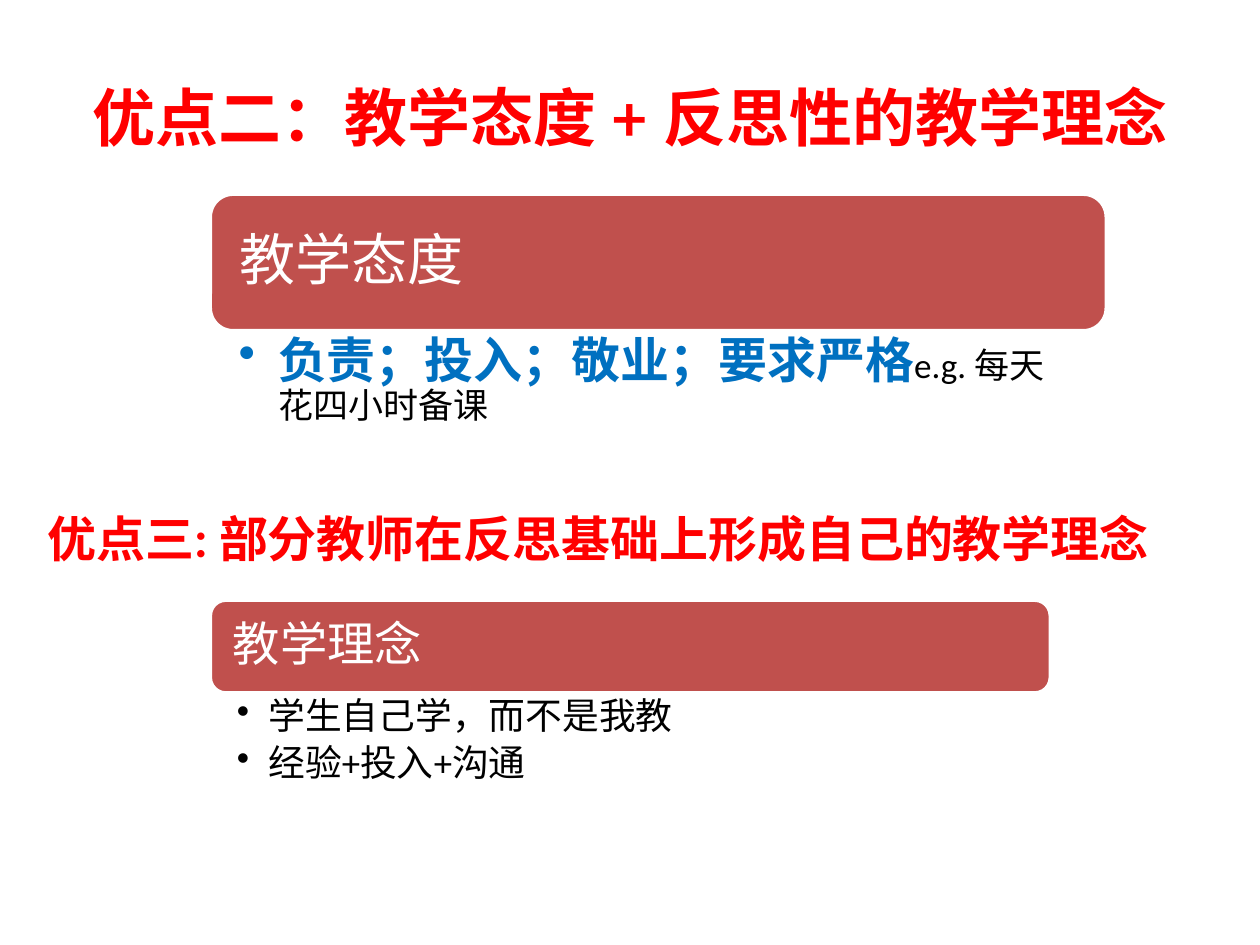
"""Build a slide on two teaching strengths, each a heading over a titled card with bullets."""
import lxml.etree
import pptx
import pptx.dml.color
import pptx.enum.shapes
import pptx.enum.text
import pptx.oxml.ns
import pptx.util

Pt = pptx.util.Pt
ALIGN = pptx.enum.text.PP_ALIGN
ANCHOR = pptx.enum.text.MSO_ANCHOR
COLORS = {"heading": "FF0000", "card": "C0504D", "white": "FFFFFF", "accent": "0070C0", "body": "000000"}


def rgb(name):
    return pptx.dml.color.RGBColor.from_string(COLORS[name])


def write(shape, paragraphs, font, anchor, insets, align=ALIGN.LEFT):
    frame = shape.text_frame
    frame.word_wrap = True
    frame.vertical_anchor = anchor
    frame.margin_left = frame.margin_right = Pt(insets[0])
    frame.margin_top = frame.margin_bottom = Pt(insets[1])
    for index, runs in enumerate(paragraphs):
        paragraph = frame.add_paragraph() if index else frame.paragraphs[0]
        paragraph.alignment = align
        for text, size, color, bold in runs:
            run = paragraph.add_run()
            run.text = text
            run.font.name = font
            run.font.size = Pt(size)
            run.font.bold = bold
            run.font.color.rgb = rgb(color)
    return frame.paragraphs


presentation = pptx.Presentation()
presentation.slide_width, presentation.slide_height = Pt(720), Pt(540)
slide = presentation.slides.add_slide(presentation.slide_layouts[6])

headings = [
    ("优点二：教学态度 + 反思性的教学理念", 36, (36, 21.6, 648, 90), ANCHOR.MIDDLE, ALIGN.CENTER),
    ("优点三: 部分教师在反思基础上形成自己的教学理念", 28, (20.2, 287.3, 708.5, 41), ANCHOR.TOP, ALIGN.LEFT),
]
for text, size, box, anchor, align in headings:
    heading = slide.shapes.add_textbox(*map(Pt, box))
    write(heading, [[(text, size, "heading", True)]], "Lato", anchor, (7.2, 3.6), align)

card_left = 120.2
cards = [
    {
        "title": "教学态度", "size": 32, "inset": 13, "top": 111, "width": 512, "height": 78,
        "points": [[("负责；投入；敬业；要求严格", 28, "accent", True),
                    ("e.g. 每天花四小时备课", 20, "body", False)]],
        "points_height": 69, "points_inset": 16.2, "indent": 22.5, "gap": 5.6,
    },
    {
        "title": "教学理念", "size": 27, "inset": 10.3, "top": 343, "width": 480, "height": 53,
        "points": [[("学生自己学，而不是我教", 21, "body", False)],
                   [("经验+投入+沟通", 21, "body", False)]],
        "points_height": 60.5, "points_inset": 15.2, "indent": 18, "gap": 4.2,
    },
]
for card in cards:
    banner = slide.shapes.add_shape(
        pptx.enum.shapes.MSO_SHAPE.ROUNDED_RECTANGLE,
        Pt(card_left), Pt(card["top"]), Pt(card["width"]), Pt(card["height"]))
    banner.shadow.inherit = False
    banner.fill.solid()
    banner.fill.fore_color.rgb = rgb("card")
    banner.line.color.rgb = rgb("white")
    banner.line.width = Pt(2)
    title = [[(card["title"], card["size"], "white", False)]]
    for paragraph in write(banner, title, "Calibri", ANCHOR.MIDDLE, (card["inset"], card["inset"])):
        paragraph.line_spacing = 0.9

    points = slide.shapes.add_textbox(
        Pt(card_left), Pt(card["top"] + card["height"]), Pt(card["width"]), Pt(card["points_height"]))
    for paragraph in write(points, card["points"], "Calibri", ANCHOR.TOP, (card["points_inset"], 2.9)):
        paragraph.level = 1
        paragraph.line_spacing = 0.9
        paragraph.space_after = Pt(card["gap"])
        properties = paragraph._p.get_or_add_pPr()
        properties.set("marL", str(Pt(card["indent"])))
        properties.set("indent", str(-Pt(card["indent"])))
        bullet = lxml.etree.SubElement(properties, pptx.oxml.ns.qn("a:buChar"))
        bullet.set("char", "•")

presentation.save("out.pptx")
